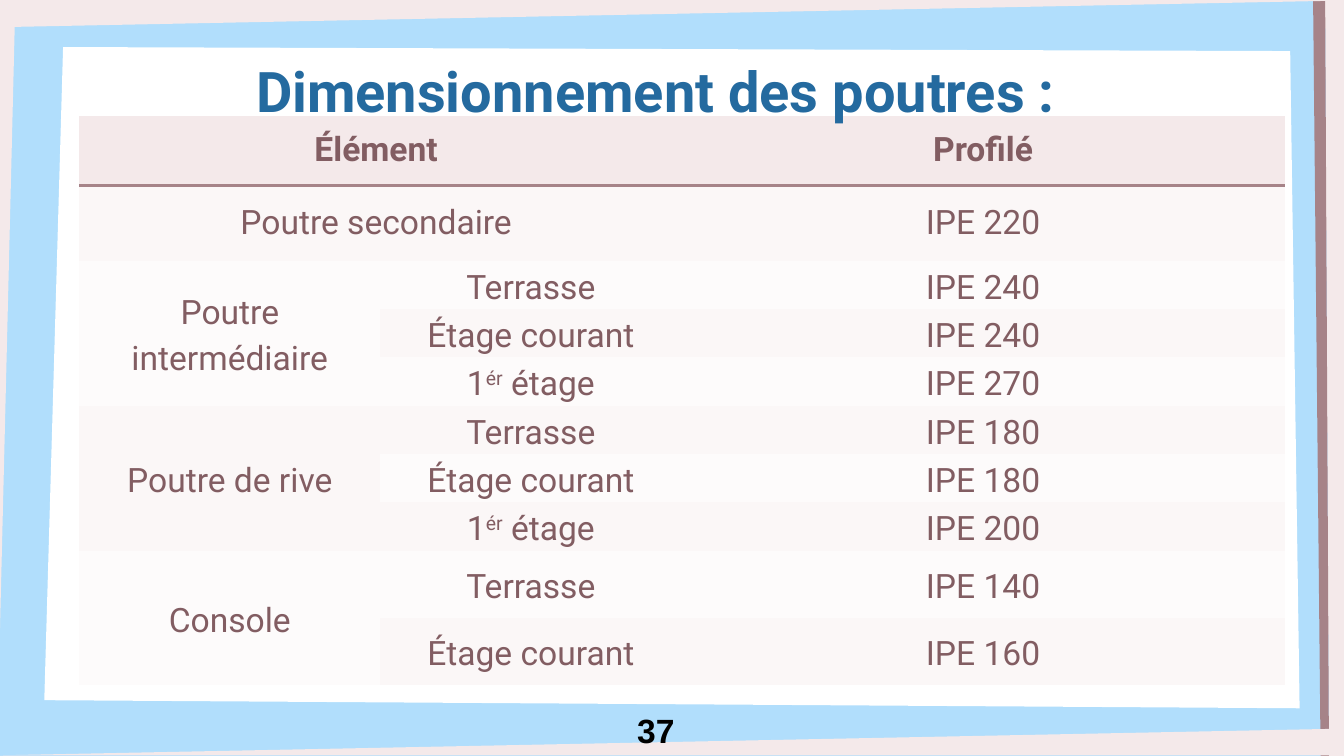
from pptx import Presentation
from pptx.dml.color import RGBColor
from pptx.enum.text import MSO_ANCHOR, MSO_AUTO_SIZE, PP_ALIGN
from pptx.oxml import parse_xml
from pptx.oxml.ns import nsdecls, qn
from pptx.util import Inches, Pt

SKY, WHITE, BLUSH, MAUVE = "B1DEFC", "FFFFFF", "F4E9EA", "A68388"
PLUM, BLUE, BLACK = "825D62", "246A9F", "000000"
BANDS = ("FDFBFB", "FBF7F7")
NO_GRID_STYLE = "{2D5ABB26-0587-4C30-8999-92F81FD0307C}"

PANELS = [
    (WHITE, [(0.33, 5.21), (9.67, 5.27), (9.6, 0.38), (0.47, 0.35)]),
    (BLUSH, [(10.12, 0), (10.09, 6.16), (9.89, 6.05), (9.86, 0)]),
    (MAUVE, [(9.86, 0), (9.89, 6.05), (9.83, 6.02), (9.77, 0)]),
    (BLUSH, [(0, 0), (0, 4.69), (0.11, 0.2), (10.2, 0)]),
    (BLUSH, [(10.2, 5.62), (10.2, 0.93), (10.09, 5.42), (0, 5.62)]),
]
FIRST_FLOOR = "1^ér^ étage"
GROUPS = [
    ("Poutre intermédiaire",
     [("Terrasse", "IPE 240"), ("Étage courant", "IPE 240"), (FIRST_FLOOR, "IPE 270")]),
    ("Poutre de rive",
     [("Terrasse", "IPE 180"), ("Étage courant", "IPE 180"), (FIRST_FLOOR, "IPE 200")]),
    ("Console", [("Terrasse", "IPE 140"), ("Étage courant", "IPE 160")]),
]
COLUMN_WIDTHS = [2.24, 2.24, 4.49]
ROW_HEIGHTS = [0.52, 0.56] + [0.36] * 6 + [0.5] * 2


def color(value):
    """Turn a hex string into a colour."""
    return RGBColor.from_string(value)


def paint(target, value):
    """Give a shape, cell or background a solid fill."""
    target.fill.solid()
    target.fill.fore_color.rgb = color(value)


def style_run(span, size, font, value, bold):
    """Format one run of text."""
    span.font.size = Pt(size)
    span.font.name = font
    span.font.bold = bold
    span.font.color.rgb = color(value)


def add_panel(page, value, points):
    """Draw one slanted panel of the frame."""
    corners = [(Inches(x), Inches(y)) for x, y in points]
    builder = page.shapes.build_freeform(*corners[0])
    builder.add_line_segments(corners[1:], close=True)
    panel = builder.convert_to_shape()
    panel.shadow.inherit = False
    paint(panel, value)
    panel.line.fill.background()


def underline_cell(cell, value, width):
    """Draw the bottom border of a cell."""
    cell._tc.get_or_add_tcPr().insert(0, parse_xml(
        f'<a:lnB {nsdecls("a")} w="{Pt(width)}"><a:solidFill>'
        f'<a:srgbClr val="{value}"/></a:solidFill></a:lnB>'))


def write_cell(cell, words, bold, tight):
    """Write centred text, raising the part between carets."""
    cell.vertical_anchor = MSO_ANCHOR.MIDDLE
    para = cell.text_frame.paragraphs[0]
    para.alignment = PP_ALIGN.CENTER
    if tight:
        cell.margin_left = cell.margin_right = Inches(0.07)
        cell.margin_top = cell.margin_bottom = 0
        para.line_spacing = 1.15
        para.space_after = Pt(10)
    for index, part in enumerate(words.split("^")):
        span = para.add_run()
        span.text = part
        style_run(span, 18, "Roboto", PLUM, bold)
        if index % 2:
            span.font._element.set("baseline", "30000")


def add_beam_table(page, left, top):
    """Build the table of beams and their sections."""
    rows = [("Élément ", "", "Profilé"), ("Poutre secondaire ", "", "IPE 220")]
    merges = [(0, 0, 0, 1), (1, 0, 1, 1)]
    for name, levels in GROUPS:
        merges.append((len(rows), 0, len(rows) + len(levels) - 1, 0))
        for index, level in enumerate(levels):
            rows.append(("" if index else name, *level))
    table = page.shapes.add_table(
        len(rows), len(COLUMN_WIDTHS), Inches(left), Inches(top),
        Inches(sum(COLUMN_WIDTHS)), Inches(sum(ROW_HEIGHTS))).table
    table._tbl.tblPr.find(qn("a:tableStyleId")).text = NO_GRID_STYLE
    for column, width in zip(table.columns, COLUMN_WIDTHS):
        column.width = Inches(width)
    for row, height in zip(table.rows, ROW_HEIGHTS):
        row.height = Inches(height)
    for first_row, first_column, last_row, last_column in merges:
        table.cell(first_row, first_column).merge(table.cell(last_row, last_column))
    for row_index, row in enumerate(rows):
        for column_index, words in enumerate(row):
            cell = table.cell(row_index, column_index)
            header = row_index == 0
            paint(cell, BLUSH if header else BANDS[row_index % 2])
            write_cell(cell, words, header, row_index > 1)
            if header:
                underline_cell(cell, MAUVE, 2)


def place_title(page, left, top, width, height):
    """Move the title placeholder over the table and format it."""
    title = page.shapes.title
    title.left, title.top = Inches(left), Inches(top)
    title.width, title.height = Inches(width), Inches(height)
    frame = title.text_frame
    frame.text = "Dimensionnement des poutres :"
    frame.auto_size = MSO_AUTO_SIZE.NONE
    frame.vertical_anchor = MSO_ANCHOR.TOP
    para = frame.paragraphs[0]
    para.alignment = PP_ALIGN.CENTER
    para.line_spacing = 1.2
    para.space_before = Pt(10)
    style_run(para.runs[0], 30, "Roboto", BLUE, True)
    title.element.getparent().append(title.element)


def add_page_number(page, left, top, width, height):
    """Write the page number at the foot."""
    box = page.shapes.add_textbox(Inches(left), Inches(top), Inches(width), Inches(height))
    box.text_frame.word_wrap = True
    box.text_frame.text = "37"
    para = box.text_frame.paragraphs[0]
    para.alignment = PP_ALIGN.CENTER
    style_run(para.runs[0], 18, "Arial", BLACK, True)


def main():
    """Build the slide and save it."""
    deck = Presentation()
    deck.slide_width = Inches(10)
    deck.slide_height = deck.slide_width * 9 // 16
    page = deck.slides.add_slide(deck.slide_layouts[5])
    paint(page.background, SKY)
    for value, points in PANELS:
        add_panel(page, value, points)
    add_beam_table(page, 0.59, 0.86)
    place_title(page, 1.1, 0.27, 7.56, 0.71)
    add_page_number(page, 4.46, 5.23, 0.84, 0.4)
    deck.save("out.pptx")


if __name__ == "__main__":
    main()
